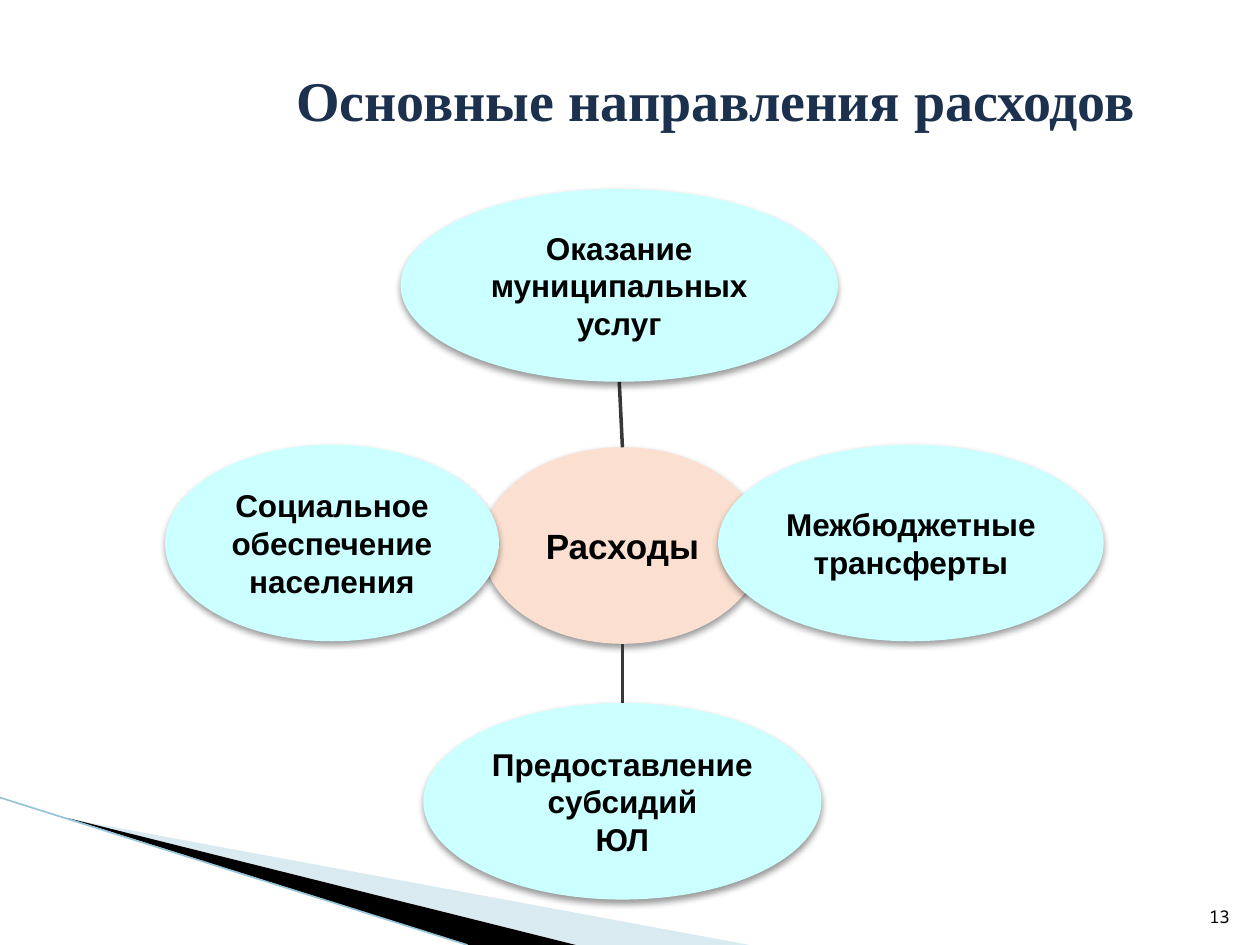
import pptx
import pptx.dml.color
import pptx.enum.shapes
import pptx.enum.text
import pptx.oxml
import pptx.oxml.ns
import pptx.util

Inches = pptx.util.Inches
ALIGN = pptx.enum.text.PP_ALIGN
ANCHOR = pptx.enum.text.MSO_ANCHOR
A_NS = pptx.oxml.ns.nsdecls("a")

TITLE = "Основные направления расходов"
PAGE_NUMBER = "13"
HUB = (["Расходы"], (3.83, 3.55, 2.22, 1.56))
DIRECTIONS = {
    "top": (["Оказание", "муниципальных", "услуг"], (3.18, 1.5, 3.47, 1.53)),
    "right": (["Межбюджетные", "трансферты"], (5.7, 3.53, 3.06, 1.56)),
    "bottom": (["Предоставление", "субсидий", "ЮЛ"], (3.36, 5.58, 3.16, 1.56)),
    "left": (["Социальное", "обеспечение", "населения"], (1.31, 3.53, 2.65, 1.56)),
}
OPPOSITE = {"top": "bottom", "bottom": "top", "left": "right", "right": "left"}

THEME = {
    "title": {"name": "Times New Roman", "size": 32, "bold": True, "color": "1C314E"},
    "hub": {"name": "Arial", "size": 20, "bold": True, "color": "000000"},
    "direction": {"name": "Arial", "size": 18, "bold": True, "color": "000000"},
    "page": {"name": "Noto Sans Mono", "size": 10, "bold": False, "color": "000000"},
    "background": "FFFFFF",
    "hub_fill": "FBE0D1",
    "direction_fill": "CCFFFF",
    "spoke": ("383838", 2),
    "corner_line": ("97C5D8", 0.95),
}
CORNER_WEDGES = [
    ("A0CBDC", 40, [(0.55, 6.5), (5.95, 7.5), (4.56, 7.5)]),
    ("000000", 100, [(0.53, 6.49), (4.57, 7.5), (3.72, 7.5)]),
]
CORNER_LINE = ((0, 6.33), (3.71, 7.5))


def rgb(code):
    return pptx.dml.color.RGBColor.from_string(code)


def fill_solid(shape, code):
    shape.fill.solid()
    shape.fill.fore_color.rgb = rgb(code)


def write(frame, lines, style, align, anchor, margin=None):
    frame.word_wrap = True
    frame.vertical_anchor = anchor
    if margin is not None:
        for side in ("left", "top", "right", "bottom"):
            setattr(frame, f"margin_{side}", Inches(margin))
    formats = {
        "name": style["name"],
        "size": pptx.util.Pt(style["size"]),
        "bold": style["bold"],
    }
    for index, line in enumerate(lines):
        paragraph = frame.paragraphs[0] if index == 0 else frame.add_paragraph()
        paragraph.alignment = align
        font_run = paragraph.add_run()
        font_run.text = line
        for key, value in formats.items():
            setattr(font_run.font, key, value)
        font_run.font.color.rgb = rgb(style["color"])


def add_line(shapes, start, end, look):
    color, width = look
    line = shapes.add_connector(
        pptx.enum.shapes.MSO_CONNECTOR.STRAIGHT, *map(Inches, start + end))
    line.line.color.rgb = rgb(color)
    line.line.width = pptx.util.Pt(width)
    line._element.spPr.append(pptx.oxml.parse_xml(f"<a:effectLst {A_NS}/>"))


def add_wedge(shapes, color, opacity, points):
    corners = [tuple(map(Inches, point)) for point in points]
    builder = shapes.build_freeform(*corners[0])
    builder.add_line_segments(corners[1:], close=True)
    wedge = builder.convert_to_shape()
    wedge.shadow.inherit = False
    fill_solid(wedge, color)
    wedge.line.fill.background()
    if opacity < 100:
        tint = wedge._element.spPr.find(".//" + pptx.oxml.ns.qn("a:srgbClr"))
        tint.append(pptx.oxml.parse_xml(f'<a:alpha {A_NS} val="{opacity * 1000}"/>'))


def add_oval(shapes, lines, box, color, style):
    oval = shapes.add_shape(
        pptx.enum.shapes.MSO_SHAPE.OVAL, *map(Inches, box))
    fill_solid(oval, color)
    oval.line.fill.background()
    oval.shadow.inherit = False
    effects = oval._element.spPr.find(pptx.oxml.ns.qn("a:effectLst"))
    effects.append(pptx.oxml.parse_xml(
        f'<a:outerShdw {A_NS} blurRad="50800" dist="25400" dir="5400000" rotWithShape="0">'
        '<a:srgbClr val="000000"><a:alpha val="40000"/></a:srgbClr></a:outerShdw>'))
    write(oval.text_frame, lines, style, ALIGN.CENTER, ANCHOR.MIDDLE, 0.01)


def edge_middle(box, side):
    left, top, width, height = box
    return {
        "top": (left + width / 2, top),
        "bottom": (left + width / 2, top + height),
        "left": (left, top + height / 2),
        "right": (left + width, top + height / 2),
    }[side]


def main():
    deck = pptx.Presentation()
    deck.slide_width, deck.slide_height = Inches(10), Inches(7.5)
    slide = deck.slides.add_slide(deck.slide_layouts[5])
    shapes = slide.shapes

    title = shapes.title
    title.left, title.top, title.width, title.height = map(
        Inches, (2.25, 0.33, 7.75, 0.92))
    fill_solid(title, THEME["background"])
    write(title.text_frame, [TITLE], THEME["title"], ALIGN.LEFT, ANCHOR.MIDDLE)

    for wedge in CORNER_WEDGES:
        add_wedge(shapes, *wedge)
    add_line(shapes, *CORNER_LINE, THEME["corner_line"])

    page = shapes.add_textbox(*map(Inches, (9.36, 7.01, 0.5, 0.4)))
    write(page.text_frame, [PAGE_NUMBER], THEME["page"], ALIGN.RIGHT, ANCHOR.BOTTOM)

    hub_lines, hub_box = HUB
    add_oval(shapes, hub_lines, hub_box, THEME["hub_fill"], THEME["hub"])
    for side, (lines, box) in DIRECTIONS.items():
        add_line(shapes, edge_middle(hub_box, side),
                 edge_middle(box, OPPOSITE[side]), THEME["spoke"])
        add_oval(shapes, lines, box, THEME["direction_fill"], THEME["direction"])

    deck.save("out.pptx")


if __name__ == "__main__":
    main()
